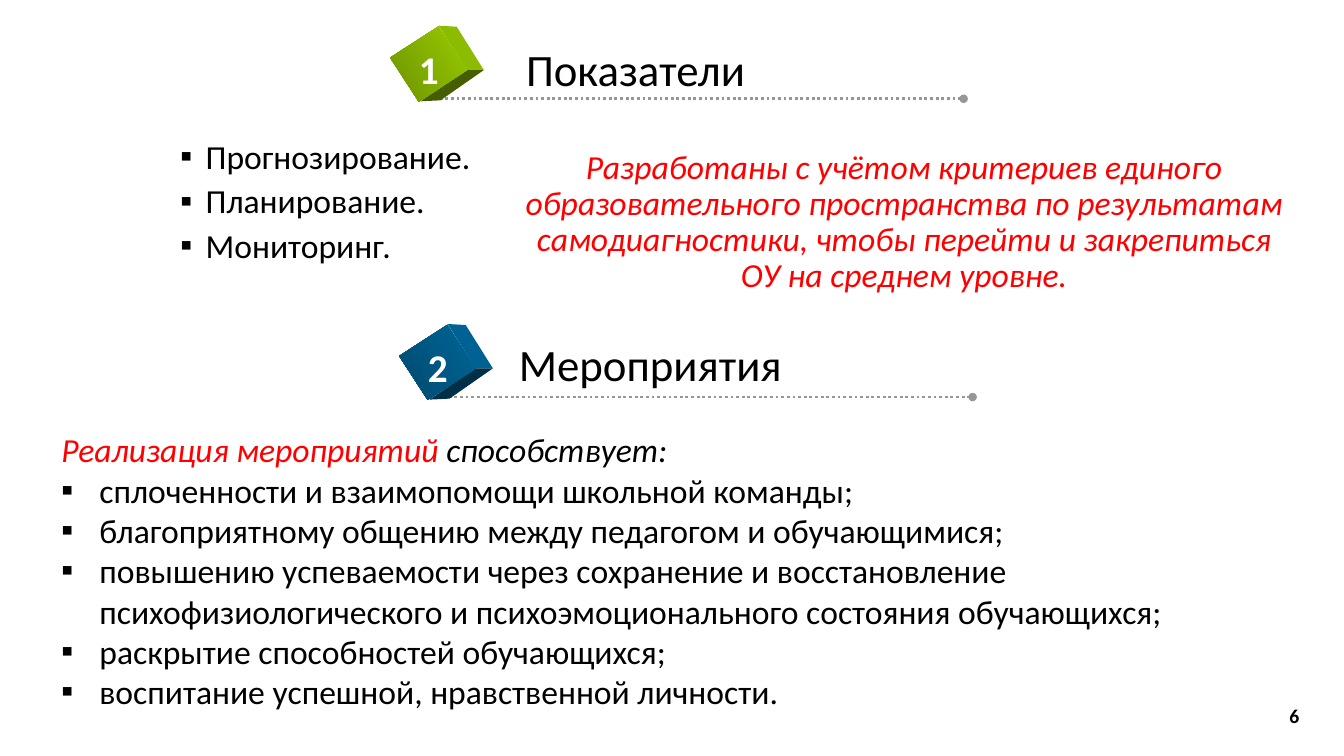
import dataclasses

import lxml.etree
import pptx
import pptx.dml.color
import pptx.enum.dml
import pptx.enum.shapes
import pptx.enum.text
import pptx.oxml.ns
import pptx.util


@dataclasses.dataclass(frozen=True)
class Theme:
    font: str = "Calibri"
    ink: str = "000000"
    accent: str = "FF0000"
    white: str = "FFFFFF"
    rule: str = "969696"
    green: tuple = ("99CC00", "6D9200", "8CBC00", "465D00")
    blue: tuple = ("006699", "00496D", "006195", "002F48")
    title: int = 32
    digit: int = 28
    body: int = 24
    number: int = 14


ALIGN = pptx.enum.text.PP_ALIGN
ANCHOR = pptx.enum.text.MSO_ANCHOR
RIGHT_FACE = [(0.75, -5.07), (2.1, -4.93), (4.12, 0.8), (2.85, 0.8)]
BOTTOM_FACE = [(-0.6, 4.93), (2.85, 0.8), (4.12, 0.8), (0.9, 4.8)]


def rgb(color):
    return pptx.dml.color.RGBColor.from_string(color)


def child(parent, tag, **attrs):
    return lxml.etree.SubElement(parent, pptx.oxml.ns.qn(tag), **attrs)


class Deck:
    def __init__(self, prs, theme):
        self.prs = prs
        self.theme = theme
        self.s = prs.slides.add_slide(prs.slide_layouts[6])

    def x(self, share):
        return round(self.prs.slide_width * share / 100)

    def y(self, share):
        return round(self.prs.slide_height * share / 100)

    def box(self, left, top, width, height):
        return self.x(left), self.y(top), self.x(width), self.y(height)

    def text(self, box, paragraphs, size, bold=False, wrap=True, align=ALIGN.LEFT,
             anchor=ANCHOR.TOP, spacing=None, before=0):
        tf = self.s.shapes.add_textbox(*self.box(*box)).text_frame
        tf.word_wrap = wrap
        tf.vertical_anchor = anchor
        for i, runs in enumerate(paragraphs):
            p = tf.add_paragraph() if i else tf.paragraphs[0]
            p.alignment = align
            if spacing:
                p.line_spacing = spacing
            if i and before:
                p.space_before = pptx.util.Pt(before)
            for words, color, italic in runs:
                r = p.add_run()
                r.text = words
                r.font.name = self.theme.font
                r.font.size = pptx.util.Pt(size)
                r.font.bold = bold
                r.font.italic = italic
                r.font.color.rgb = rgb(color)
        return tf

    def bullets(self, paragraphs, indent):
        for p in paragraphs:
            pPr = p._p.get_or_add_pPr()
            pPr.set("marL", str(self.x(indent)))
            pPr.set("indent", str(-self.x(indent)))
            child(pPr, "a:buFont", typeface=self.theme.font)
            child(pPr, "a:buChar", char="▪")

    def rule(self, left, top, width):
        line = self.s.shapes.add_connector(
            pptx.enum.shapes.MSO_CONNECTOR.STRAIGHT,
            self.x(left), self.y(top), self.x(left + width), self.y(top))
        line.line.color.rgb = rgb(self.theme.rule)
        line.line.width = pptx.util.Pt(2)
        line.line.dash_style = pptx.enum.dml.MSO_LINE.ROUND_DOT
        child(line.line._get_or_add_ln(), "a:tailEnd", type="oval")
        child(line._element.spPr, "a:effectLst")

    def face(self, cx, cy, offsets, color):
        points = [(self.x(cx + dx), self.y(cy + dy)) for dx, dy in offsets]
        builder = self.s.shapes.build_freeform(*points[0])
        builder.add_line_segments(points[1:], close=True)
        sp = builder.convert_to_shape()
        sp.shadow.inherit = False
        sp.fill.solid()
        sp.fill.fore_color.rgb = rgb(color)
        sp.line.fill.background()

    def cube(self, cx, cy, colors):
        light, dark, right, bottom = colors
        self.face(cx, cy, RIGHT_FACE, right)
        self.face(cx, cy, BOTTOM_FACE, bottom)
        sp = self.s.shapes.add_shape(
            pptx.enum.shapes.MSO_SHAPE.RECTANGLE,
            *self.box(cx - 1.95, cy - 3.8, 3.9, 7.6))
        sp.rotation = 57
        sp.shadow.inherit = False
        sp.line.fill.background()
        sp.fill.gradient()
        sp.fill.gradient_angle = 270
        for stop, color in zip(sp.fill.gradient_stops, (light, dark)):
            stop.color.rgb = rgb(color)

    def heading(self, digit, title, center, title_box, colors):
        t = self.theme
        cx, cy = center
        self.rule(cx + 0.42, cy + 4.6, 39.4)
        self.cube(cx, cy, colors)
        self.text(title_box, [[(title, t.ink, False)]], t.title, wrap=False)
        self.text((cx - 1.45, cy - 3.13, 3, 7.6), [[(digit, t.white, False)]],
                  t.digit, bold=True, wrap=False)


def main():
    prs = pptx.Presentation()
    prs.slide_width = pptx.util.Inches(13.33)
    prs.slide_height = pptx.util.Inches(7.5)
    t = Theme()
    deck = Deck(prs, t)

    stages = ["Прогнозирование.", "Планирование.", "Мониторинг."]
    tf = deck.text((12.68, 17.87, 25.65, 22.13),
                   [[(stage, t.ink, False)] for stage in stages],
                   t.body, spacing=0.9, before=6)
    deck.bullets(tf.paragraphs, 1.88)

    deck.heading("1", "Показатели", (31.88, 8.47), (38.4, 4.8, 18, 8.53), t.green)
    deck.heading("2", "Мероприятия", (32.55, 47.93), (37.87, 43.87, 21.23, 8.53), t.blue)

    deck.text((74.92, 92, 22.5, 5.33), [[("6", t.ink, False)]], t.number,
              bold=True, align=ALIGN.RIGHT, anchor=ANCHOR.MIDDLE)

    lead = [("Реализация мероприятий ", t.accent, True), ("способствует:", t.ink, True)]
    results = [
        "сплоченности и взаимопомощи школьной команды;",
        "благоприятному общению между педагогом и обучающимися;",
        "повышению успеваемости через сохранение и восстановление "
        "психофизиологического и психоэмоционального состояния обучающихся;",
        "раскрытие способностей обучающихся;",
        "воспитание успешной, нравственной личности.",
    ]
    tf = deck.text((3.83, 56.13, 85.8, 39.07),
                   [lead] + [[(result, t.ink, False)] for result in results], t.body)
    deck.bullets(tf.paragraphs[1:], 2.83)

    note = ("Разработаны с учётом критериев единого образовательного пространства "
            "по результатам самодиагностики, чтобы перейти и закрепиться ОУ "
            "на среднем уровне.")
    deck.text((37.87, 19.2, 58.8, 20.8), [[(note, t.accent, True)]], t.body,
              align=ALIGN.CENTER, spacing=0.9)

    prs.save("out.pptx")


if __name__ == "__main__":
    main()
